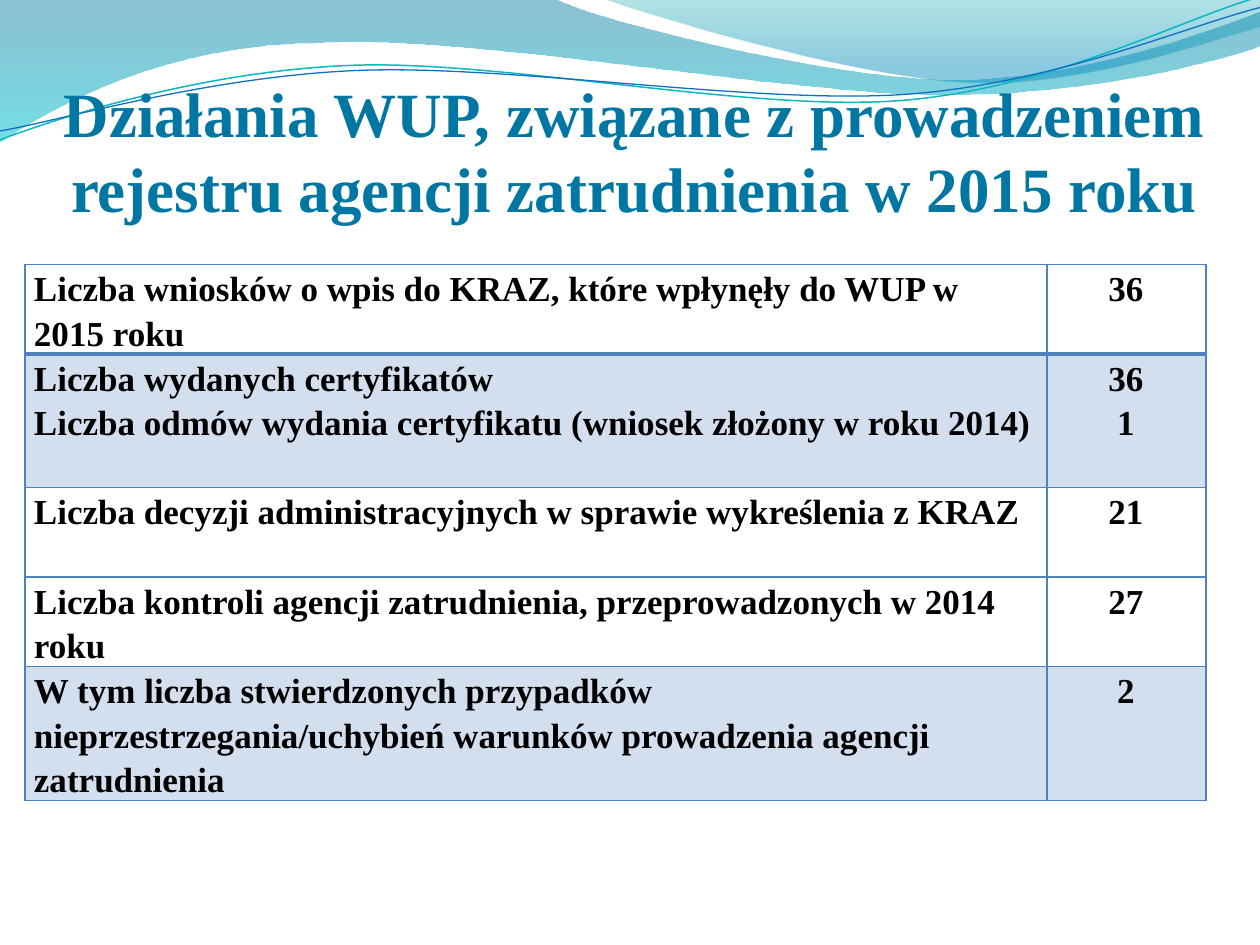
from math import cos, radians, sin
from lxml.etree import SubElement
from pptx import Presentation
from pptx.dml.color import RGBColor
from pptx.enum.text import MSO_ANCHOR, PP_ALIGN
from pptx.oxml.ns import qn
from pptx.util import Inches, Pt


def style_run(run, size, color):
    run.font.name = "Times New Roman"
    run.font.size = Pt(size)
    run.font.bold = True
    run.font.color.rgb = RGBColor.from_string(color)


def draw_curve(shapes, start, segments, closed, tilt=0):
    turn = radians(-tilt)
    middle_x, middle_y = 5, 0.58
    placed = []
    for segment in [[start], *segments]:
        offsets = [(x - middle_x, y - middle_y) for x, y in segment]
        placed.append([(Inches(middle_x + x * cos(turn) - y * sin(turn)),
                        Inches(middle_y + x * sin(turn) + y * cos(turn))) for x, y in offsets])
    builder = shapes.build_freeform(*placed[0][0])
    builder.add_line_segments([segment[-1] for segment in placed[1:]], close=closed)
    curve = builder.convert_to_shape()
    curve.shadow.inherit = False
    for line, segment in zip(list(curve.element.spPr.iter(qn("a:lnTo"))), placed[1:]):
        if len(segment) == 3:
            bezier = SubElement(line.getparent(), qn("a:cubicBezTo"))
            line.getparent().replace(line, bezier)
            for x, y in segment:
                SubElement(bezier, qn("a:pt"), x=str(x - curve.left), y=str(y - curve.top))
    curve.rotation = tilt
    return curve


prs = Presentation()
prs.slide_width = Inches(10)
prs.slide_height = Inches(7.5)
slide = prs.slides.add_slide(prs.slide_layouts[6])
slide.background.fill.solid()
slide.background.fill.fore_color.rgb = RGBColor.from_string("FFFFFF")

waves = [
    ((0, -0.01), [
        [(4.4, -0.01)],
        [(4.76, 0.17), (6.64, 0.63), (7.58, 0.63)],
        [(8.53, 0.63), (9.58, 0.26), (10, 0.09)],
        [(10.01, 0.36)],
        [(9.83, 0.44), (8.7, 0.76), (7.46, 0.75)],
        [(6.22, 0.75), (3.82, 0.28), (2.57, 0.34)],
        [(1.29, 0.35), (0.46, 0.83), (-0.01, 1.13)],
    ], [(0, "0074A1", 45), (1, "00C6CF", 55)]),
    ((4.79, -0.01), [
        [(5.09, 0.11), (6.82, 0.62), (7.69, 0.65)],
        [(8.56, 0.69), (9.61, 0.32), (10, 0.21)],
        [(10, 0)],
    ], [(0, "00A1A9", 30), (0.8, "008BBF", 45)]),
]
for start, segments, stops in waves:
    wave = draw_curve(slide.shapes, start, segments, True)
    wave.line.fill.background()
    wave.fill.gradient()
    wave.fill.gradient_angle = 270
    for stop, (position, color, opacity) in zip(wave.fill.gradient_stops, stops):
        stop.position = position
        stop.color.rgb = RGBColor.from_string(color)
    gradient_colors = wave.element.spPr.find(qn("a:gradFill")).iter(qn("a:srgbClr"))
    for gradient_color, (position, color, opacity) in zip(gradient_colors, stops):
        SubElement(gradient_color, qn("a:alpha"), val=str(opacity * 1000))

strands = [
    ((0, 1.11), [
        [(0.48, 0.93), (1.58, 0.57), (2.77, 0.52)],
        [(3.95, 0.47), (5.93, 0.89), (7.13, 0.8)],
        [(8.33, 0.71), (9.38, 0.15), (9.98, -0.02)],
    ], "0AB8BF", 0.85),
    ((0, 1.04), [
        [(0.47, 0.96), (1.64, 0.61), (2.83, 0.56)],
        [(4.03, 0.51), (5.97, 0.83), (7.17, 0.75)],
        [(8.36, 0.67), (9.41, 0.21), (10, 0.06)],
    ], "0F6FC6", 0.75),
]
for start, segments, color, width in strands:
    strand = draw_curve(slide.shapes, start, segments, False, 357.3)
    strand.fill.background()
    strand.line.color.rgb = RGBColor.from_string(color)
    strand.line.width = Pt(width)

title = slide.shapes.add_textbox(Inches(0.35), Inches(0.29), Inches(9.37), Inches(1.5)).text_frame
title.word_wrap = True
title.vertical_anchor = MSO_ANCHOR.BOTTOM
title.margin_left = title.margin_right = title.margin_bottom = 0
title.margin_top = Inches(0.05)
heading = title.paragraphs[0]
heading.alignment = PP_ALIGN.CENTER
heading_run = heading.add_run()
heading_run.text = "Działania WUP, związane z prowadzeniem rejestru agencji zatrudnienia w 2015 roku"
style_run(heading_run, 36, "0076A3")

register = [
    (["Liczba wniosków o wpis do KRAZ, które wpłynęły do WUP w 2015 roku"], ["36"], 0.71, None),
    (["Liczba wydanych certyfikatów",
      "Liczba odmów wydania certyfikatu (wniosek złożony w roku 2014)"], ["36", "1"], 1.06, "D3DFEE"),
    (["Liczba decyzji administracyjnych w sprawie wykreślenia z KRAZ"], ["21"], 0.71, None),
    (["Liczba kontroli agencji zatrudnienia, przeprowadzonych w 2014 roku"], ["27"], 0.71, None),
    (["W tym liczba stwierdzonych przypadków nieprzestrzegania/uchybień "
      "warunków prowadzenia agencji zatrudnienia"], ["2"], 1.06, "D3DFEE"),
]
table = slide.shapes.add_table(len(register), 2, Inches(0.2), Inches(2.1), Inches(9.37), Inches(4.25)).table
table.first_row = False
table.horz_banding = False
table.columns[0].width = Inches(8.11)
table.columns[1].width = Inches(1.26)

for row, (labels, counts, height, shade) in enumerate(register):
    table.rows[row].height = Inches(height)
    for column, lines in enumerate((labels, counts)):
        cell = table.cell(row, column)
        cell.margin_left = Inches(0.07)
        cell.margin_right = Inches(0.08)
        cell.margin_top = cell.margin_bottom = 0
        properties = cell._tc.get_or_add_tcPr()
        for side in "LRTB":
            thick = (row, side) in ((0, "B"), (1, "T"))
            border = SubElement(properties, qn(f"a:ln{side}"), w=str(Pt(2.25 if thick else 1)))
            SubElement(SubElement(border, qn("a:solidFill")), qn("a:srgbClr"), val="4F81BD")
        if shade:
            cell.fill.solid()
            cell.fill.fore_color.rgb = RGBColor.from_string(shade)
        else:
            cell.fill.background()
        for index, line in enumerate(lines):
            frame = cell.text_frame
            paragraph = frame.add_paragraph() if index else frame.paragraphs[0]
            paragraph.line_spacing = Pt(25.5)
            paragraph.alignment = PP_ALIGN.CENTER if column else PP_ALIGN.LEFT
            run = paragraph.add_run()
            run.text = line
            style_run(run, 20, "000000")

prs.save("out.pptx")
